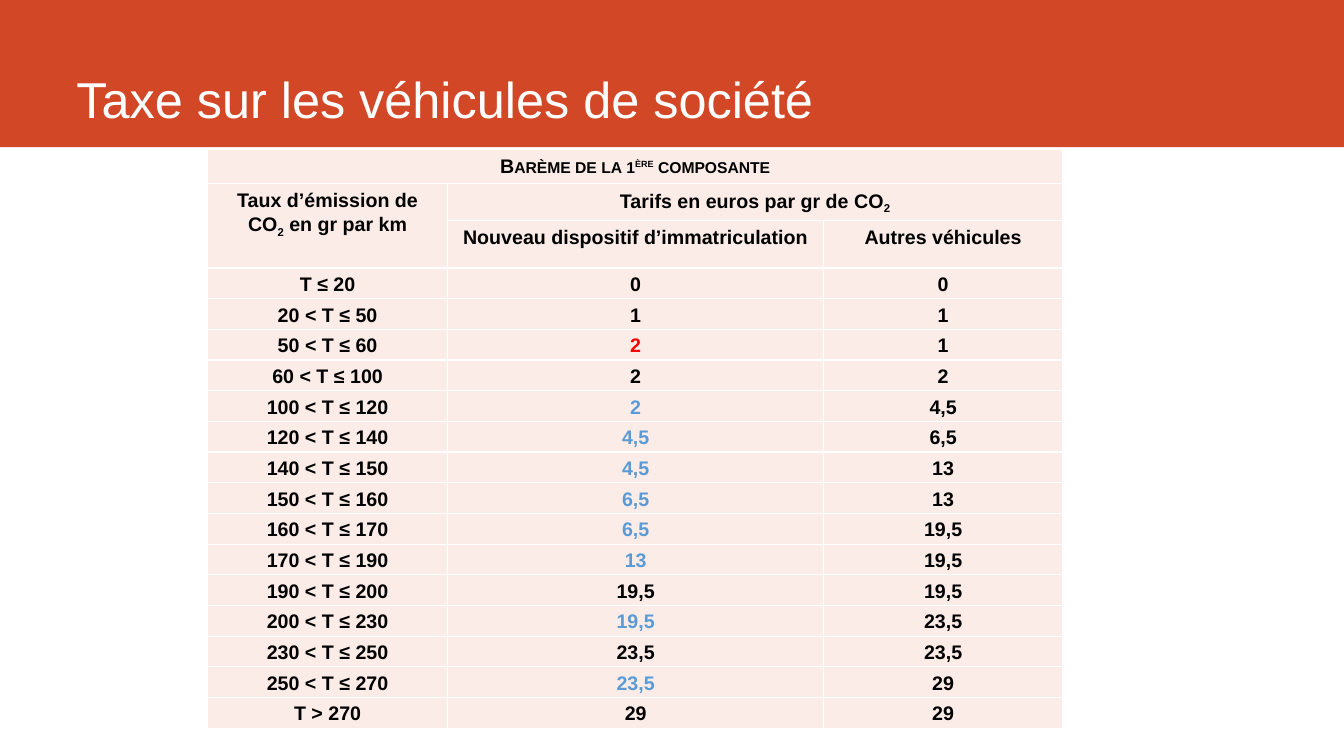
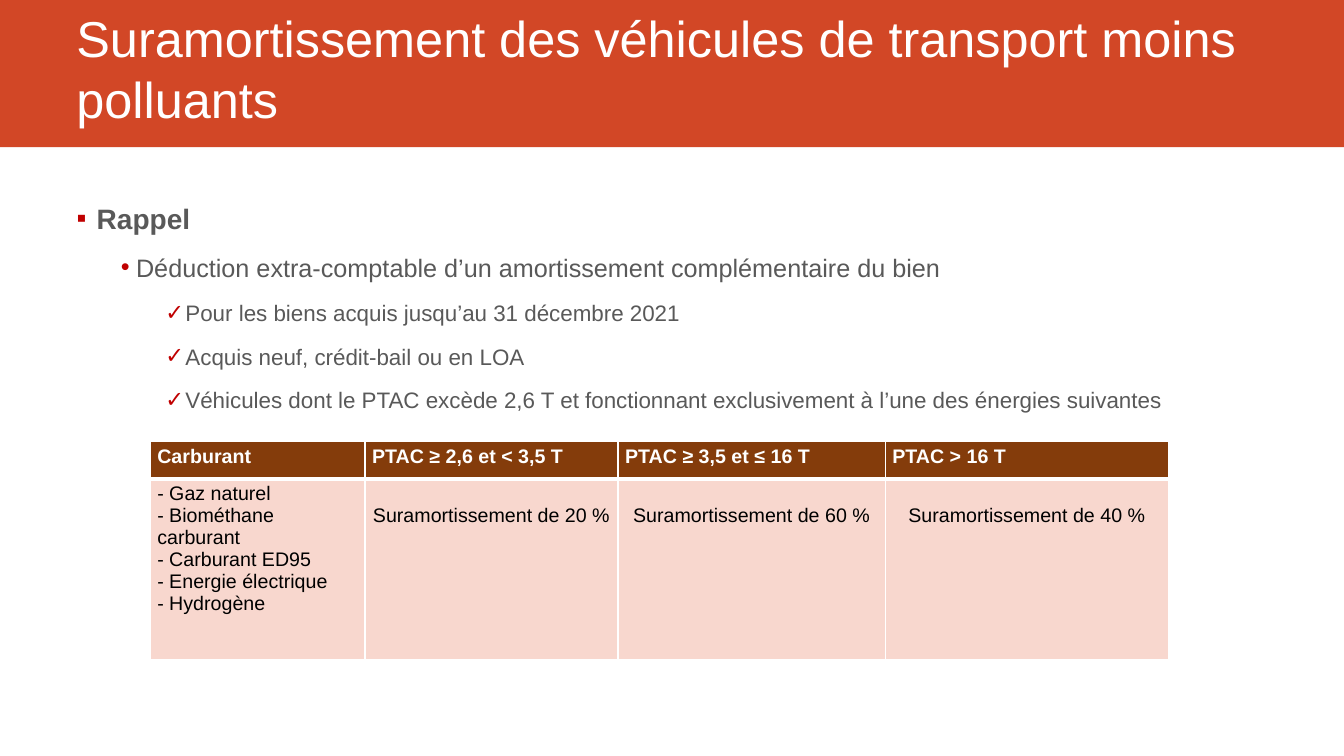
"""Build two slides about vehicle taxation."""
import dataclasses

import lxml.etree
import pptx
import pptx.dml.color
import pptx.enum.shapes
import pptx.enum.text
import pptx.oxml.ns
import pptx.util

Inches = pptx.util.Inches
Points = pptx.util.Pt
Color = pptx.dml.color.RGBColor
Align = pptx.enum.text.PP_ALIGN
Anchor = pptx.enum.text.MSO_ANCHOR


@dataclasses.dataclass(frozen=True)
class Theme:
    """Hold the colours and type sizes of the slides."""
    font: str = "Arial"
    band: Color = Color.from_string("D24726")
    white: Color = Color.from_string("FFFFFF")
    black: Color = Color.from_string("000000")
    body: Color = Color.from_string("595959")
    bullet: str = "C00000"
    border: str = "FFFFFF"
    raised: Color = Color.from_string("FF0000")
    changed: Color = Color.from_string("5B9BD5")
    rate_fill: Color = Color.from_string("FCECE8")
    header_fill: Color = Color.from_string("843C0B")
    fuel_fill: Color = Color.from_string("F8D7CE")
    title_size: int = 36
    table_size: int = 14
    level_sizes: tuple = (20, 18, 16)


THEME = Theme()
SLIDE_SIZE = (13.33, 7.5)
BAND_BOX = (0, 0, 13.33, 1.46)
TITLE_BOX = (0.66, 0, 11.76, 1.32)

BULLETS = ((0.3, -0.2, "▪"), (0.69, -0.15, "•"), (1.18, -0.2, "✓"))
REMINDERS = (
    (0, "Rappel"),
    (1, "Déduction extra-comptable d’un amortissement complémentaire du bien"),
    (2, "Pour les biens acquis jusqu’au 31 décembre 2021"),
    (2, "Acquis neuf, crédit-bail ou en LOA"),
    (2, "Véhicules dont le PTAC excède 2,6 T et fonctionnant exclusivement "
        "à l’une des énergies suivantes"),
)
RATES = (
    ("T ≤ 20", "0", "0", THEME.black),
    ("20 < T ≤ 50", "1", "1", THEME.black),
    ("50 < T ≤ 60", "2", "1", THEME.raised),
    ("60 < T ≤ 100", "2", "2", THEME.black),
    ("100 < T ≤ 120", "2", "4,5", THEME.changed),
    ("120 < T ≤ 140", "4,5", "6,5", THEME.changed),
    ("140 < T ≤ 150", "4,5", "13", THEME.changed),
    ("150 < T ≤ 160", "6,5", "13", THEME.changed),
    ("160 < T ≤ 170", "6,5", "19,5", THEME.changed),
    ("170 < T ≤ 190", "13", "19,5", THEME.changed),
    ("190 < T ≤ 200", "19,5", "19,5", THEME.black),
    ("200 < T ≤ 230", "19,5", "23,5", THEME.changed),
    ("230 < T ≤ 250", "23,5", "23,5", THEME.black),
    ("250 < T ≤ 270", "23,5", "29", THEME.changed),
    ("T > 270", "29", "29", THEME.black),
)
FUELS = ("- Gaz naturel", "- Biométhane carburant", "- Carburant ED95",
         "- Energie électrique", "- Hydrogène")
FUEL_TABLE = (
    ("Carburant", FUELS),
    ("PTAC ≥ 2,6 et < 3,5 T", ("Suramortissement de 20 %",)),
    ("PTAC ≥ 3,5 et ≤ 16 T", ("Suramortissement de 60 %",)),
    ("PTAC > 16 T", ("Suramortissement de 40 %",)),
)


def apply_format(target, **values):
    """Set each given attribute on the target."""
    for name, value in values.items():
        setattr(target, name, value)


def inches(box):
    """Turn a tuple of numbers into lengths."""
    return [Inches(value) for value in box]


def add_run(paragraph, text, size, color, bold=False, **attributes):
    """Add a run with its font and any extra run attributes."""
    run = paragraph.add_run()
    run.text = text
    apply_format(run.font, name=THEME.font, size=Points(size), bold=bold)
    run.font.color.rgb = color
    for name, value in attributes.items():
        run._r.get_or_add_rPr().set(name, value)


def add_text_box(slide, box, **frame_format):
    """Add a wrapping text box and return its text frame."""
    frame = slide.shapes.add_textbox(*inches(box)).text_frame
    apply_format(frame, word_wrap=True, **frame_format)
    return frame


def add_xml(parent, tag, **attributes):
    """Append a drawing element to the parent."""
    element = lxml.etree.SubElement(parent, pptx.oxml.ns.qn(tag))
    for name, value in attributes.items():
        element.set(name, str(value))
    return element


def add_bullet(paragraph, level):
    """Give a paragraph the indent and bullet of its level."""
    left, hanging, character = BULLETS[level]
    properties = paragraph._p.get_or_add_pPr()
    properties.set("marL", str(Inches(left)))
    properties.set("indent", str(Inches(hanging)))
    add_xml(add_xml(properties, "a:buClr"), "a:srgbClr", val=THEME.bullet)
    add_xml(properties, "a:buFont", typeface=THEME.font)
    add_xml(properties, "a:buChar", char=character)


def add_titled_slide(presentation, title):
    """Add a blank slide with the colour band and its title."""
    slide = presentation.slides.add_slide(presentation.slide_layouts[6])
    band = slide.shapes.add_shape(
        pptx.enum.shapes.MSO_SHAPE.RECTANGLE, *inches(BAND_BOX))
    band.shadow.inherit = False
    band.fill.solid()
    band.fill.fore_color.rgb = THEME.band
    band.line.fill.background()
    frame = add_text_box(slide, TITLE_BOX, vertical_anchor=Anchor.BOTTOM)
    add_run(frame.paragraphs[0], title, THEME.title_size, THEME.white)
    return slide


def add_plain_table(slide, box, columns, rows):
    """Add a table without banding, with the given column and row sizes."""
    table = slide.shapes.add_table(
        len(rows), len(columns), *inches(box)).table
    apply_format(table, first_row=False, horz_banding=False)
    for column, width in zip(table.columns, columns):
        column.width = Inches(width)
    for row, height in zip(table.rows, rows):
        row.height = Inches(height)
    return table


def style_cell(cell, fill, side=0.07, top=0.04, bottom=0.04,
               top_line=1, bottom_line=1):
    """Set the margins, borders and fill of a cell."""
    apply_format(cell, margin_left=Inches(side), margin_right=Inches(side),
                 margin_top=Inches(top), margin_bottom=Inches(bottom))
    properties = cell._tc.get_or_add_tcPr()
    widths = {"a:lnL": 1, "a:lnR": 1, "a:lnT": top_line, "a:lnB": bottom_line}
    for tag, width in widths.items():
        line = add_xml(properties, tag, w=Points(width))
        add_xml(add_xml(line, "a:solidFill"), "a:srgbClr", val=THEME.border)
    cell.fill.solid()
    cell.fill.fore_color.rgb = fill


def write_rate(cell, *runs, color=THEME.black):
    """Write centred bold runs, each a text and its run attributes."""
    paragraph = cell.text_frame.paragraphs[0]
    apply_format(paragraph, alignment=Align.CENTER, line_spacing=1.07,
                 space_after=Points(8))
    for text, attributes in runs:
        add_run(paragraph, text, THEME.table_size, color, True, **attributes)


def add_rate_table(slide, box):
    """Add the table of rates by emission level."""
    head_rows = [0.34, 0.37, 0.47]
    rate_height = (box[3] - sum(head_rows)) / len(RATES)
    table = add_plain_table(slide, box, (2.38, 3.73, 2.37),
                            head_rows + [rate_height] * len(RATES))
    wide_cells = {(0, 0), (1, 0), (1, 1)}
    wide_margins = {"side": 0.11, "top": 0.05, "bottom": 0.03}
    for row in range(len(table.rows)):
        for column in range(len(table.columns)):
            margins = (wide_margins if (row, column) in wide_cells
                       else {"bottom": 0.01})
            style_cell(table.cell(row, column), THEME.rate_fill, **margins)
    for first, last in (((0, 0), (0, 2)), ((1, 0), (2, 0)), ((1, 1), (1, 2))):
        table.cell(*first).merge(table.cell(*last))

    small = {"cap": "small"}
    subscript = ("2", {"baseline": "-25000"})
    write_rate(table.cell(0, 0), ("Barème de la 1", small),
               ("ère", {"baseline": "30000", **small}), (" composante", small))
    write_rate(table.cell(1, 0), ("Taux d’émission de CO", {}), subscript,
               (" en gr par km", {}))
    write_rate(table.cell(1, 1), ("Tarifs en euros par gr de CO", {}), subscript)
    write_rate(table.cell(2, 1), ("Nouveau dispositif d’immatriculation", {}))
    write_rate(table.cell(2, 2), ("Autres véhicules", {}))
    for row, (level, new_rate, other_rate, color) in enumerate(
            RATES, len(head_rows)):
        write_rate(table.cell(row, 0), (level, {}))
        write_rate(table.cell(row, 1), (new_rate, {}), color=color)
        write_rate(table.cell(row, 2), (other_rate, {}))


def add_reminders(slide, box):
    """Add the bulleted reminder text."""
    frame = add_text_box(slide, box, margin_left=0, margin_right=0,
                         margin_top=0, margin_bottom=0)
    for index, (level, text) in enumerate(REMINDERS):
        paragraph = frame.add_paragraph() if index else frame.paragraphs[0]
        apply_format(paragraph, level=level, space_after=Points(6),
                     space_before=Points(6 if index else 0))
        add_bullet(paragraph, level)
        add_run(paragraph, text, THEME.level_sizes[level], THEME.body,
                bold=level == 0)


def add_fuel_table(slide, box):
    """Add the table of extra depreciation by fuel and weight."""
    table = add_plain_table(slide, box, (2.13, 2.51, 2.65, 2.81), (0.37, 1.79))
    for column, (heading, lines) in enumerate(FUEL_TABLE):
        header, content = table.cell(0, column), table.cell(1, column)
        style_cell(header, THEME.header_fill, bottom_line=3)
        style_cell(content, THEME.fuel_fill, top=0.26 if column else 0.04,
                   top_line=3)
        add_run(header.text_frame.paragraphs[0], heading, THEME.table_size,
                THEME.white, True)
        frame = content.text_frame
        for index, line in enumerate(lines):
            paragraph = frame.add_paragraph() if index else frame.paragraphs[0]
            paragraph.alignment = Align.CENTER if column else Align.LEFT
            add_run(paragraph, line, THEME.table_size, THEME.black)


def main():
    """Build and save the presentation."""
    presentation = pptx.Presentation()
    width, height = inches(SLIDE_SIZE)
    apply_format(presentation, slide_width=width, slide_height=height)

    slide = add_titled_slide(presentation, "Taxe sur les véhicules de société")
    add_rate_table(slide, (2.06, 1.48, 8.48, 5.75))

    slide = add_titled_slide(
        presentation,
        "Suramortissement des véhicules de transport moins polluants")
    add_reminders(slide, (0.66, 2, 11.76, 2.3))
    add_fuel_table(slide, (1.49, 4.38, 10.1, 2.16))
    presentation.save("out.pptx")


if __name__ == "__main__":
    main()
